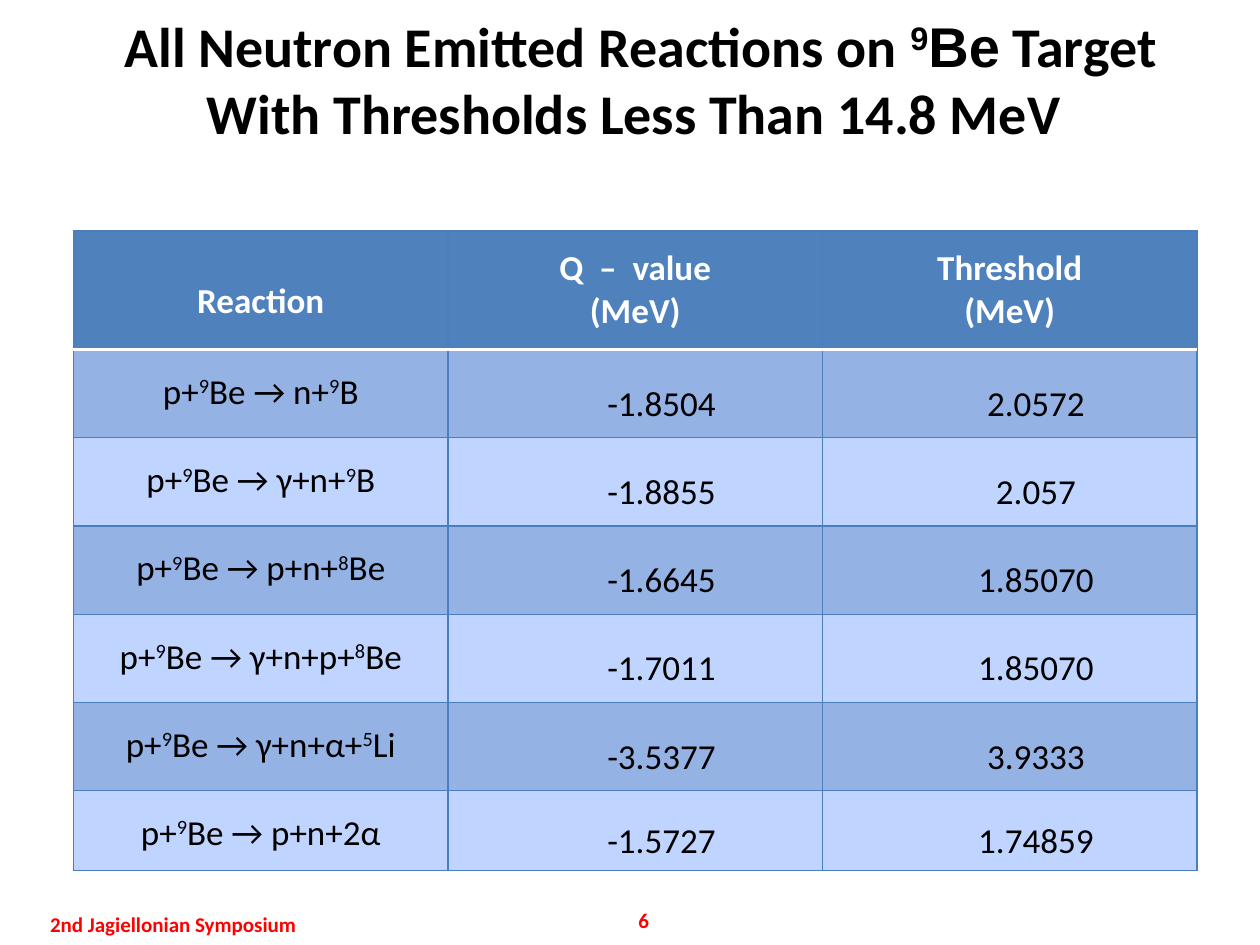
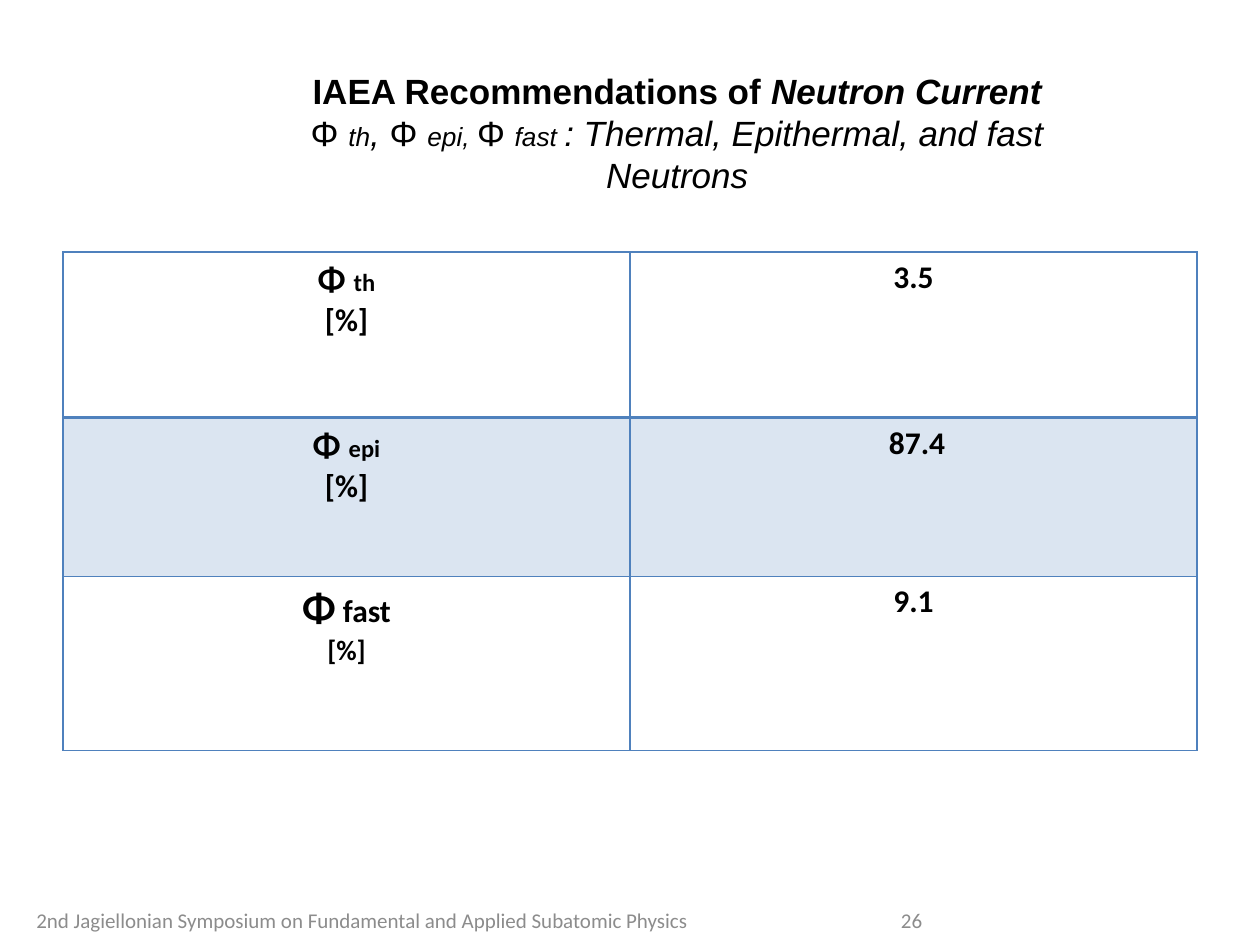
from dataclasses import dataclass, replace
from typing import NamedTuple

from lxml.etree import SubElement
from pptx import Presentation
from pptx.dml.color import RGBColor
from pptx.enum.text import MSO_ANCHOR, MSO_AUTO_SIZE, PP_ALIGN
from pptx.oxml.ns import qn
from pptx.util import Emu, Pt

EMU_PER_PX = 7620  # 120 px to the inch
SLIDE_WIDTH, SLIDE_HEIGHT = 1200, 900
TITLE_ONLY_LAYOUT = 5

BLACK = RGBColor(0x00, 0x00, 0x00)
WHITE = RGBColor(0xFF, 0xFF, 0xFF)
RED = RGBColor(0xFF, 0x00, 0x00)
GRAY = RGBColor(0x8C, 0x8C, 0x8C)
BLUE = RGBColor(0x4F, 0x81, 0xBD)
GRID_BLUE = RGBColor(0x4B, 0x7E, 0xBC)
BAND_DARK = RGBColor(0x94, 0xB2, 0xE4)
BAND_LIGHT = RGBColor(0xBF, 0xD4, 0xFF)
BAND_PALE = RGBColor(0xDB, 0xE5, 0xF1)


class Box(NamedTuple):
    left: int
    top: int
    width: int
    height: int


class Line(NamedTuple):
    color: RGBColor
    points: float


@dataclass(frozen=True)
class Style:
    size: int
    font: str = "Calibri"
    color: RGBColor = BLACK
    bold: bool = False
    italic: bool = False
    raised: bool = False


class Run(NamedTuple):
    text: str
    style: Style


Paragraphs = list[list[Run]]


@dataclass
class Cell:
    paragraphs: Paragraphs
    fill: RGBColor
    anchor: MSO_ANCHOR = MSO_ANCHOR.TOP
    spacing: float = 1.0
    indent: int = 0


@dataclass
class Grid:
    box: Box
    row_heights: list[int]
    rows: list[list[Cell]]
    line: Line
    head_line: Line
    margins: tuple[int, int]  # left and right, top and bottom


@dataclass
class Footer:
    text: str
    box: Box
    number: str
    number_box: Box
    style: Style


def px(length: float) -> Emu:
    return Emu(round(length * EMU_PER_PX))


def place(shape, box: Box) -> None:
    shape.left, shape.top, shape.width, shape.height = map(px, box)


def write(frame, paragraphs: Paragraphs, align=PP_ALIGN.CENTER,
          spacing: float = 1.0, indent: int = 0) -> None:
    for index, runs in enumerate(paragraphs):
        paragraph = frame.add_paragraph() if index else frame.paragraphs[0]
        paragraph.alignment = align
        paragraph.line_spacing = spacing
        if indent:
            paragraph._p.get_or_add_pPr().set("indent", str(px(indent)))
        for text, style in runs:
            run = paragraph.add_run()
            run.text = text
            run.font.name = style.font
            run.font.size = Pt(style.size)
            run.font.bold = style.bold
            run.font.italic = style.italic
            run.font.color.rgb = style.color
            if style.raised:
                run._r.get_or_add_rPr().set("baseline", "30000")


def add_title(slide, box: Box, paragraphs: Paragraphs, anchor: MSO_ANCHOR) -> None:
    title = slide.shapes.title
    place(title, box)
    frame = title.text_frame
    frame.word_wrap = True
    frame.auto_size = MSO_AUTO_SIZE.NONE
    frame.vertical_anchor = anchor
    write(frame, paragraphs)


def add_label(slide, box: Box, text: str, style: Style, align: PP_ALIGN) -> None:
    frame = slide.shapes.add_textbox(*map(px, box)).text_frame
    frame.word_wrap = True
    frame.vertical_anchor = MSO_ANCHOR.MIDDLE
    write(frame, [[Run(text, style)]], align)


def add_footer(slide, footer: Footer) -> None:
    add_label(slide, footer.box, footer.text, footer.style, PP_ALIGN.CENTER)
    add_label(slide, footer.number_box, footer.number, footer.style, PP_ALIGN.RIGHT)


def set_borders(cell, lines: dict[str, Line]) -> None:
    properties = cell._tc.get_or_add_tcPr()
    for side, line in lines.items():
        border = SubElement(properties, qn(f"a:ln{side}"), w=str(Pt(line.points)))
        fill = SubElement(border, qn("a:solidFill"))
        SubElement(fill, qn("a:srgbClr"), val=str(line.color))


def add_grid(slide, grid: Grid) -> None:
    column_count = len(grid.rows[0])
    table = slide.shapes.add_table(len(grid.rows), column_count, *map(px, grid.box)).table
    table.first_row = table.horz_banding = False
    for column in table.columns:
        column.width = px(grid.box.width / column_count)
    for row, height in zip(table.rows, grid.row_heights):
        row.height = px(height)
    side_margin, end_margin = map(px, grid.margins)
    for row_index, row_cells in enumerate(grid.rows):
        for column_index, content in enumerate(row_cells):
            cell = table.cell(row_index, column_index)
            cell.margin_left = cell.margin_right = side_margin
            cell.margin_top = cell.margin_bottom = end_margin
            cell.vertical_anchor = content.anchor
            set_borders(cell, {
                "L": grid.line,
                "R": grid.line,
                "T": grid.head_line if row_index == 1 else grid.line,
                "B": grid.head_line if row_index == 0 else grid.line,
            })
            cell.fill.solid()
            cell.fill.fore_color.rgb = content.fill
            write(cell.text_frame, content.paragraphs,
                  spacing=content.spacing, indent=content.indent)


def reaction_runs(formula: str, style: Style) -> list[Run]:
    """Every second piece between bars is a raised mass number."""
    return [Run(piece, replace(style, raised=index % 2 == 1))
            for index, piece in enumerate(formula.split("|"))]


def build_reactions_slide(slide) -> None:
    # Title
    heading = Style(32, bold=True)
    symbol = replace(heading, font="Arial")
    add_title(slide, Box(80, 0, 1060, 150), [
        [Run("All Neutron Emitted Reactions on ", heading),
         Run("9", replace(symbol, raised=True)), Run("Be", symbol),
         Run(" Target", heading)],
        [Run("With Thresholds Less Than 14.8 MeV ", heading)],
    ], MSO_ANCHOR.MIDDLE)

    # Reaction table
    header = Style(20, color=WHITE, bold=True)
    body = Style(20)
    headings = [(["Reaction"], 1.5), (["Q  –  value", "(MeV)"], 1.0),
                (["Threshold", "(MeV)"], 1.0)]
    reactions = [
        ("p+|9|Be → n+|9|B", "-1.8504", "2.0572"),
        ("p+|9|Be → γ+n+|9|B", "-1.8855", "2.057"),
        ("p+|9|Be → p+n+|8|Be", "-1.6645", "1.85070"),
        ("p+|9|Be → γ+n+p+|8|Be", "-1.7011", "1.85070"),
        ("p+|9|Be → γ+n+α+|5|Li", "-3.5377", "3.9333"),
        ("p+|9|Be → p+n+2α", "-1.5727", "1.74859"),
    ]
    rows = [[Cell([[Run(line, header)] for line in lines], BLUE,
                  MSO_ANCHOR.MIDDLE, spacing) for lines, spacing in headings]]
    for index, (formula, *values) in enumerate(reactions):
        band = BAND_LIGHT if index % 2 else BAND_DARK
        rows.append([Cell([reaction_runs(formula, body)], band, spacing=1.5)]
                    + [Cell([[Run(value, body)]], band, MSO_ANCHOR.MIDDLE, 1.5, 50)
                       for value in values])
    add_grid(slide, Grid(Box(70, 220, 1070, 610), [113] + [84] * 5 + [76], rows,
                         Line(GRID_BLUE, 0.75), Line(WHITE, 2), (1, 0)))

    add_footer(slide, Footer("2nd Jagiellonian Symposium", Box(0, 860, 330, 40),
                             "6", Box(570, 852, 60, 48),
                             Style(12, color=RED, bold=True)))


def build_current_slide(slide) -> None:
    # Title
    plain = Style(20, "Arial")
    bold = replace(plain, bold=True)
    italic = replace(plain, italic=True)
    index_style = replace(italic, size=15)
    add_title(slide, Box(260, 60, 770, 174), [
        [Run("IAEA Recommendations of ", bold),
         Run("Neutron Current", replace(bold, italic=True))],
        [Run("Φ ", plain), Run("th", index_style), Run(", ", italic),
         Run("Φ ", plain), Run("epi, ", index_style),
         Run("Φ ", plain), Run("fast ", index_style),
         Run(": Thermal, Epithermal, and fast Neutrons", italic)],
    ], MSO_ANCHOR.TOP)

    # Flux table: symbol, index, their sizes, unit size, value, fill
    fluxes = [
        ("Φ ", 20, "th", 14, 18, "3.5", WHITE),
        ("Φ ", 20, "epi", 14, 18, " 87.4", BAND_PALE),
        ("Φ", 24, " fast", 18, 16, "9.1", WHITE),
    ]
    strong = Style(18, bold=True)
    rows = []
    for symbol, symbol_size, name, name_size, unit_size, value, fill in fluxes:
        label = [
            [Run(symbol, replace(strong, size=symbol_size)),
             Run(name, replace(strong, size=name_size))],
            [Run("[%]", replace(strong, size=unit_size))],
        ]
        rows.append([Cell(label, fill), Cell([[Run(value, strong)]], fill)])
    add_grid(slide, Grid(Box(60, 240, 1080, 475), [158, 151, 166], rows,
                         Line(BLUE, 1), Line(BLUE, 2), (12, 6)))

    add_footer(slide, Footer(
        "2nd Jagiellonian Symposium on Fundamental and Applied Subatomic Physics",
        Box(0, 852, 690, 48), "26", Box(610, 852, 280, 48), Style(12, color=GRAY)))


def main() -> None:
    presentation = Presentation()
    presentation.slide_width = px(SLIDE_WIDTH)
    presentation.slide_height = px(SLIDE_HEIGHT)
    layout = presentation.slide_layouts[TITLE_ONLY_LAYOUT]
    for build in (build_reactions_slide, build_current_slide):
        build(presentation.slides.add_slide(layout))
    presentation.save("out.pptx")


if __name__ == "__main__":
    main()
